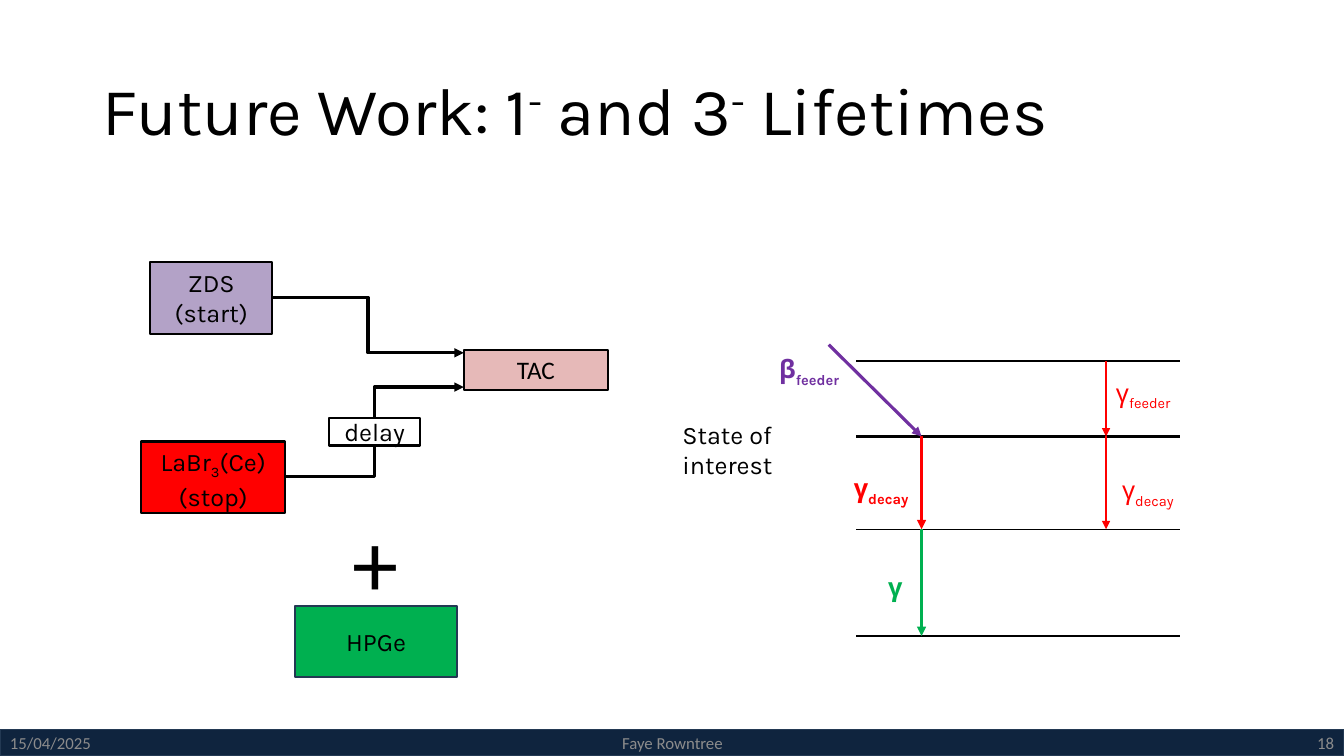
"""Build the slide on future work for the 1- and 3- lifetimes."""
from dataclasses import dataclass, field

from lxml.etree import SubElement
from pptx import Presentation
from pptx.dml.color import RGBColor
from pptx.enum.shapes import MSO_CONNECTOR, MSO_SHAPE
from pptx.enum.text import MSO_ANCHOR, MSO_AUTO_SIZE, PP_ALIGN
from pptx.oxml.ns import qn
from pptx.slide import Slide
from pptx.util import Pt

PX = 9144
SUPER, SUB = 30, -25


@dataclass(frozen=True)
class Theme:
    black: str = "000000"
    white: str = "FFFFFF"
    navy: str = "0F243E"
    navy_edge: str = "233953"
    grey: str = "8C8C8C"
    lilac: str = "B3A2C7"
    pink: str = "E6B9B8"
    red: str = "FF0000"
    purple: str = "7030A0"
    green: str = "00B050"
    font: str = "Karla"
    plain_font: str = "Calibri"
    title_size: int = 48
    plus_size: int = 66
    body_size: int = 18
    footer_size: int = 12
    thin: float = 1
    medium: float = 1.5
    thick: float = 2.25


@dataclass
class Board:
    slide: Slide
    theme: Theme = field(default_factory=Theme)

    def add_words(self, frame, runs, color, size=None, font=None, bold=False,
                  align=PP_ALIGN.LEFT, anchor=MSO_ANCHOR.TOP):
        frame.word_wrap = True
        frame.vertical_anchor = anchor
        paragraph = frame.paragraphs[0]
        paragraph.alignment = align
        for words, baseline in runs:
            run = paragraph.add_run()
            run.text = words
            run.font.name = font or self.theme.font
            run.font.size = Pt(size or self.theme.body_size)
            run.font.bold = bold
            run.font.color.rgb = RGBColor.from_string(color)
            if baseline:
                run.font._element.set("baseline", str(baseline * 1000))

    def title(self, place, runs):
        heading = self.slide.shapes.title
        heading.left, heading.top, heading.width, heading.height = (
            length * PX for length in place)
        frame = heading.text_frame
        frame.auto_size = MSO_AUTO_SIZE.NONE
        frame.paragraphs[0].line_spacing = 0.9
        self.add_words(frame, runs, self.theme.black, self.theme.title_size,
                       anchor=MSO_ANCHOR.MIDDLE)

    def box(self, place, fill, edge, weight, runs=(), grow=False, font=None):
        rect = self.slide.shapes.add_shape(
            MSO_SHAPE.RECTANGLE, *(length * PX for length in place))
        rect.shadow.inherit = False
        rect.fill.solid()
        rect.fill.fore_color.rgb = RGBColor.from_string(fill)
        rect.line.color.rgb = RGBColor.from_string(edge)
        rect.line.width = Pt(weight)
        if grow:
            rect.text_frame.auto_size = MSO_AUTO_SIZE.SHAPE_TO_FIT_TEXT
        self.add_words(rect.text_frame, runs, self.theme.black, font=font,
                       align=PP_ALIGN.CENTER,
                       anchor=MSO_ANCHOR.TOP if grow else MSO_ANCHOR.MIDDLE)

    def label(self, place, runs, color, **style):
        textbox = self.slide.shapes.add_textbox(
            *(length * PX for length in place))
        self.add_words(textbox.text_frame, runs, color, **style)

    def line(self, ends, color, weight, arrow=True, kind=MSO_CONNECTOR.STRAIGHT):
        connector = self.slide.shapes.add_connector(
            kind, *(length * PX for length in ends))
        connector.line.color.rgb = RGBColor.from_string(color)
        connector.line.width = Pt(weight)
        properties = connector._element.spPr
        if arrow:
            SubElement(properties.find(qn("a:ln")), qn("a:tailEnd"), type="triangle")
        SubElement(properties, qn("a:effectLst"))


def draw_footer(board):
    theme = board.theme
    board.box((0, 724, 1333, 26), theme.navy, theme.navy_edge, theme.thin)
    for left, width, words, align in (
            (0, 300, "15/04/2025", PP_ALIGN.LEFT),
            (442, 450, "Faye Rowntree", PP_ALIGN.CENTER),
            (1033, 300, "18", PP_ALIGN.RIGHT)):
        board.label((left, 717, width, 40), [(words, 0)], theme.grey,
                    size=theme.footer_size, font=theme.plain_font,
                    align=align, anchor=MSO_ANCHOR.MIDDLE)


def draw_electronics(board):
    theme = board.theme
    edge = theme.black, theme.medium
    board.box((149, 260, 121, 71), theme.lilac, *edge, [("ZDS (start)", 0)], grow=True)
    board.box((140, 438, 143, 71), theme.red, *edge,
              [("LaBr", 0), ("3", SUB), ("(Ce) (stop)", 0)], grow=True)
    board.box((460, 347, 143, 40), theme.pink, *edge, [("TAC", 0)],
              grow=True, font=theme.plain_font)
    for signal in ((270, 295, 460, 350), (283, 473, 460, 384)):
        board.line(signal, theme.black, theme.thick, kind=MSO_CONNECTOR.ELBOW)
    board.box((326, 415, 91, 27), theme.white, *edge, [("delay", 0)])
    board.box((293, 601, 160, 71), theme.green, theme.navy_edge, theme.medium,
              [("HPGe", 0)])
    board.label((340, 496, 116, 121), [("+", 0)], theme.black,
                size=theme.plus_size, font=theme.plain_font)


def draw_level_scheme(board):
    theme = board.theme
    feeding, interest, daughter, ground = 358, 433, 525, 631
    decay_x, cascade_x = 914, 1097
    for level in (feeding, interest, daughter, ground):
        weight = theme.medium if level == interest else theme.thin
        board.line((1170, level, 849, level), theme.black, weight, arrow=False)
    for ends, color, weight in (
            ((cascade_x, feeding, cascade_x, interest), theme.red, theme.thin),
            ((cascade_x, interest, cascade_x, daughter), theme.red, theme.thin),
            ((decay_x, interest, decay_x, daughter), theme.red, theme.thick),
            ((822, 342, decay_x, interest), theme.purple, theme.thick),
            ((decay_x, daughter, decay_x, ground), theme.green, theme.thick)):
        board.line(ends, color, weight)
    for left, top, width, symbol, index, color, bold in (
            (763, 346, 189, "β", "feeder", theme.purple, True),
            (1097, 369, 98, "γ", "feeder", theme.red, False),
            (1103, 466, 98, "γ", "decay", theme.red, False),
            (837, 464, 98, "γ", "decay", theme.red, True),
            (871, 562, 98, "γ", "", theme.green, True)):
        runs = [(symbol, 0)] + ([(index, SUB)] if index else [])
        board.label((left, top, width, 40), runs, color, bold=bold)
    board.label((667, 411, 197, 40), [("State of interest", 0)], theme.black)


def main():
    deck = Presentation()
    deck.slide_width, deck.slide_height = 1333 * PX, 750 * PX
    board = Board(deck.slides.add_slide(deck.slide_layouts.get_by_name("Title Only")))
    board.title((92, 40, 1150, 145),
                [("Future Work: 1", 0), ("-", SUPER), (" and 3", 0),
                 ("-", SUPER), (" Lifetimes", 0)])
    draw_footer(board)
    draw_electronics(board)
    draw_level_scheme(board)
    deck.save("out.pptx")


if __name__ == "__main__":
    main()
